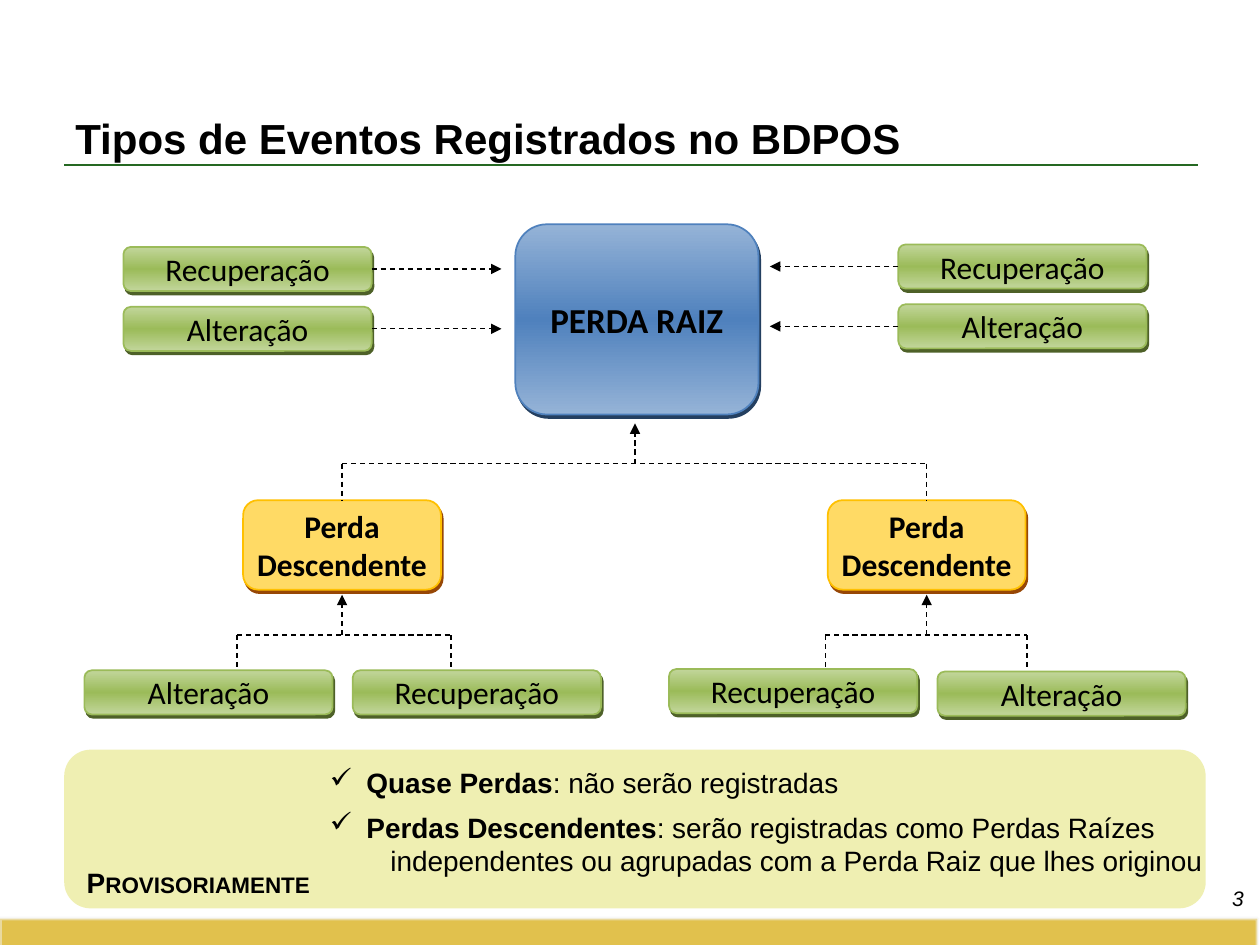
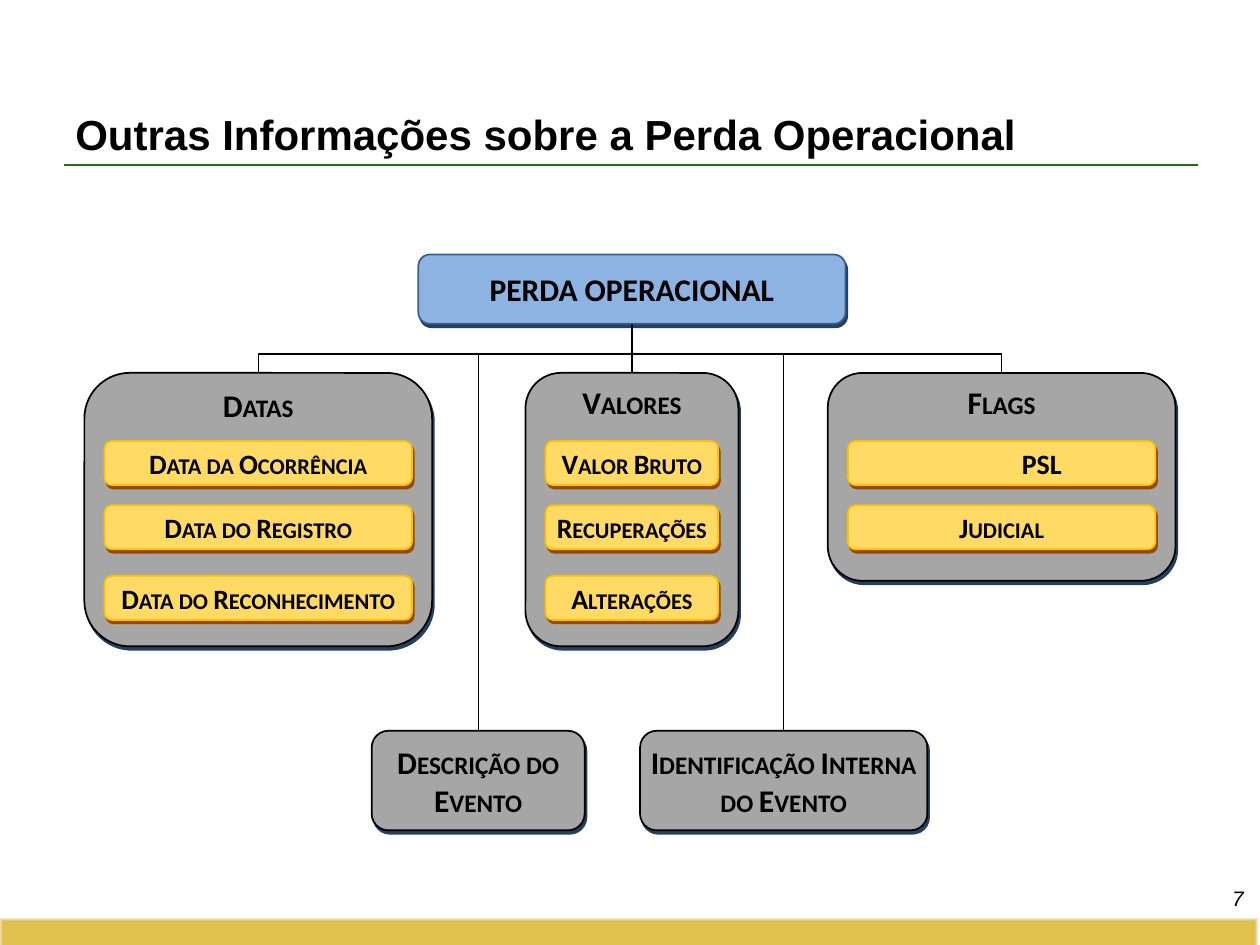
"""Build the two slides on operational loss events."""
import copy
from dataclasses import dataclass
from typing import Any, NamedTuple, Optional, Union

import pptx
import pptx.dml.color
import pptx.enum.dml
import pptx.enum.shapes
import pptx.enum.text
import pptx.oxml
import pptx.oxml.ns
import pptx.util

qn = pptx.oxml.ns.qn
Pt = pptx.util.Pt
ALIGN = pptx.enum.text.PP_ALIGN
ANCHOR = pptx.enum.text.MSO_ANCHOR
SHAPE = pptx.enum.shapes.MSO_SHAPE
TOP, LEFT, BOTTOM, RIGHT = range(4)

prs = pptx.Presentation()
prs.slide_width = pptx.util.Inches(10)
prs.slide_height = pptx.util.Inches(7.5)
COL = prs.slide_width // 100
ROW = prs.slide_height // 75


class Look(NamedTuple):
    fill: tuple[str, ...]
    line: str
    shadow: str


@dataclass(frozen=True)
class Theme:
    ink: str = "000000"
    rule: str = "256822"
    band: str = "E1C14D"
    band_edge: str = "F2F2F2"
    note: str = "CCCC00"
    text_font: str = "Arial"
    box_font: str = "Calibri"
    title: float = 24
    root: float = 20
    box: float = 18
    body: float = 16
    number: float = 12
    blue: Look = Look(("95B3D7", "4F81BD", "95B3D7"), "4F81BD", "243F60")
    green: Look = Look(("C2D69B", "9BBB59", "C2D69B"), "9BBB59", "4E6128")
    yellow: Look = Look(("FFDA65",), "FFC000", "974706")
    sky: Look = Look(("8DB3E2",), "365F91", "243F60")
    grey: Look = Look(("A6A6A6",), "000000", "243F60")


T = Theme()


class Point(NamedTuple):
    col: float
    row: float


class Box(NamedTuple):
    col: float
    row: float
    cols: float
    rows: float

    def emu(self) -> tuple[int, ...]:
        return tuple(round(v * u) for v, u in zip(self, (COL, ROW, COL, ROW)))

    def side(self, site: int) -> Point:
        dx, dy = ((0.5, 0), (0, 0.5), (0.5, 1), (1, 0.5))[site]
        return Point(self.col + dx * self.cols, self.row + dy * self.rows)


class Joint(NamedTuple):
    box: Box
    sp: Any
    site: int

    def point(self) -> Point:
        return self.box.side(self.site)


End = Union[Point, Joint]


class Item(NamedTuple):
    text: str
    indent: float = 0


class Panel(NamedTuple):
    box: Box
    title: str
    items: tuple[Item, ...]


def set_all(obj: Any, values: dict) -> None:
    for name, value in values.items():
        setattr(obj, name, value)


def rgb(code: str) -> pptx.dml.color.RGBColor:
    return pptx.dml.color.RGBColor.from_string(code)


def sub(parent: Any, tag: str, **attrs: str) -> Any:
    el = parent.makeelement(qn(tag), attrs)
    parent.append(el)
    return el


def write(p: Any, text: str, size: float, font: str = T.text_font,
          small: bool = False, **style: Any) -> None:
    r = p.add_run()
    r.text = text
    set_all(r.font, {"size": Pt(size), "name": font, **style})
    r.font.color.rgb = rgb(T.ink)
    if small:
        r._r.get_or_add_rPr().set("cap", "small")


def text_box(s: Any, box: Box, anchor: Any = ANCHOR.TOP) -> Any:
    tf = s.shapes.add_textbox(*box.emu()).text_frame
    set_all(tf, {"word_wrap": True, "vertical_anchor": anchor})
    return tf


def plain(s: Any, kind: Any, box: Box, fill: str, alpha: Optional[int] = None) -> Any:
    sp = s.shapes.add_shape(kind, *box.emu())
    sp.shadow.inherit = False
    sp.fill.solid()
    sp.fill.fore_color.rgb = rgb(fill)
    sp.line.fill.background()
    if alpha:
        sub(sp._element.spPr.find(".//" + qn("a:srgbClr")), "a:alpha", val=str(alpha * 1000))
    return sp


def gradient(sp: Any, colors: tuple[str, ...]) -> None:
    sp.fill.gradient()
    sp.fill.gradient_angle = 270
    stops = sp._element.spPr.find(".//" + qn("a:gsLst"))
    stops.append(copy.deepcopy(stops[0]))
    for i, (stop, color) in enumerate(zip(sp.fill.gradient_stops, colors)):
        stop.color.rgb = rgb(color)
        stop.position = i / (len(colors) - 1)


def card(s: Any, box: Box, text: str, look: Look, size: float = T.box,
         bold: bool = True, small: bool = False, anchor: Any = ANCHOR.MIDDLE,
         indent: float = 0) -> Any:
    sp = plain(s, SHAPE.ROUNDED_RECTANGLE, box, look.fill[0])
    if len(look.fill) > 1:
        gradient(sp, look.fill)
    sp.line.color.rgb = rgb(look.line)
    sp.line.width = Pt(1)
    shadow = sub(sp._element.spPr.find(qn("a:effectLst")), "a:outerShdw",
                 dist=str(Pt(2.2)), dir=str(63 * 60000), algn="ctr", rotWithShape="0")
    sub(shadow, "a:srgbClr", val=look.shadow)
    tf = sp.text_frame
    set_all(tf, {"word_wrap": True, "vertical_anchor": anchor, "margin_top": 0,
                 "margin_right": 0, "margin_bottom": 0, "margin_left": round(indent * COL)})
    p = tf.paragraphs[0]
    p.alignment = ALIGN.CENTER
    write(p, text, size, T.box_font, small, bold=bold)
    return sp


def link(s: Any, begin: End, end: End, dashed: bool = False, arrow: bool = False,
         color: str = T.ink, width: float = 0.75) -> None:
    a, b = (e.point() if isinstance(e, Joint) else e for e in (begin, end))
    cx = s.shapes.add_connector(
        pptx.enum.shapes.MSO_CONNECTOR.STRAIGHT, round(a.col * COL), round(a.row * ROW),
        round(b.col * COL), round(b.row * ROW))
    for e, connect in ((begin, cx.begin_connect), (end, cx.end_connect)):
        if isinstance(e, Joint):
            connect(e.sp, e.site)
    cx.line.color.rgb = rgb(color)
    cx.line.width = Pt(width)
    if dashed:
        cx.line.dash_style = pptx.enum.dml.MSO_LINE.DASH
    if arrow:
        sub(cx._element.spPr.find(qn("a:ln")), "a:tailEnd", type="triangle")
    sub(cx._element.spPr, "a:effectLst")


def fork(s: Any, tip: Point, row: float, ends: tuple[End, End]) -> None:
    tops = [Point((e.point() if isinstance(e, Joint) else e).col, row) for e in ends]
    link(s, tops[0], tops[1], dashed=True)
    link(s, Point(tip.col, row), tip, dashed=True, arrow=True)
    for top, end in zip(tops, ends):
        link(s, top, end, dashed=True)


def new_slide(title: str, number: int, title_row: float, anchor: Any) -> Any:
    s = prs.slides.add_slide(prs.slide_layouts[6])
    band = plain(s, SHAPE.RECTANGLE, Box(0, 72.9, 99.8, 2.4), T.band)
    band.line.color.rgb = rgb(T.band_edge)
    band.line.width = Pt(2)
    edge = band._element.spPr.find(qn("a:ln")).find(".//" + qn("a:srgbClr"))
    sub(edge, "a:alpha", val="50000")
    link(s, Point(5.1, 13.1), Point(95.1, 13.1), color=T.rule, width=1.5)
    tf = text_box(s, Box(5, title_row, 90, 8.7), anchor)
    write(tf.paragraphs[0], title, T.title, bold=True)
    p = text_box(s, Box(95.7, 69.8, 4, 3.1)).paragraphs[0]
    p.alignment = ALIGN.RIGHT
    write(p, str(number), T.number, italic=True)
    return s


def note_line(p: Any, term: str, text: str, margin: float, bullet: bool) -> None:
    pPr = p._p.get_or_add_pPr()
    pPr.set("marL", str(round(margin * COL)))
    pPr.set("indent", str(-round(margin * COL) if bullet else 0))
    if bullet:
        sub(pPr, "a:buChar", char="✓")
        write(p, term, T.body, bold=True)
    else:
        sub(pPr, "a:buNone")
    write(p, text, T.body, bold=False)


def event_types() -> None:
    s = new_slide("Tipos de Eventos Registrados no BDPOS", 3, 8.4, ANCHOR.TOP)
    card(s, Box(40.9, 17.8, 19.3, 15.1), "PERDA RAIZ", T.blue, T.root)
    for col, row, tip_col, site in ((9.8, 19.6, 39.8, RIGHT), (71.3, 19.4, 61.1, LEFT)):
        for i, text in enumerate(("Recuperação", "Alteração")):
            box = Box(col, row + 4.75 * i, 19.7, 3.5)
            joint = Joint(box, card(s, box, text, T.green, bold=False), site)
            link(s, joint, Point(tip_col, joint.point().row), dashed=True, arrow=True)

    children = []
    for col in (19.3, 65.7):
        box = Box(col, 39.7, 15.7, 7.1)
        children.append(Joint(box, card(s, box, "Perda Descendente", T.yellow), TOP))
    fork(s, Point(50.4, 33.6), 36.8, tuple(children))
    for child, cols in zip(children, ((18.8, 35.8), (65.5, 81.5))):
        fork(s, Point(child.point().col, 47.2), 50.4, tuple(Point(c, 53.2) for c in cols))
    for col, row, text in ((6.7, 53.2, "Alteração"), (28, 53.2, "Recuperação"),
                           (53.1, 53.1, "Recuperação"), (74.4, 53.3, "Alteração")):
        card(s, Box(col, row, 19.7, 3.5), text, T.green, bold=False)

    plain(s, SHAPE.ROUNDED_RECTANGLE, Box(5.1, 59.5, 90.6, 12.6), T.note, alpha=30)
    tf = text_box(s, Box(25.2, 60.3, 72.1, 9.9))
    lines = (("Quase Perdas", ": não serão registradas", 2.9, True),
             ("Perdas Descendentes", ": serão registradas como Perdas Raízes", 2.9, True),
             ("", "independentes ou agrupadas com a Perda Raiz que lhes originou", 4.8, False))
    for i, line in enumerate(lines):
        note_line(tf.add_paragraph() if i else tf.paragraphs[0], *line)
    tf.paragraphs[0].space_after = Pt(6)
    p = text_box(s, Box(5.1, 68.2, 21.3, 3.7)).paragraphs[0]
    p.alignment = ALIGN.CENTER
    write(p, "Provisoriamente", T.body, small=True, bold=True)


def loss_information() -> None:
    s = new_slide("Outras Informações sobre a Perda Operacional", 7, 4.4, ANCHOR.BOTTOM)
    bus_row, item_rows, pad = 28.1, (35, 40.1, 45.7), 1.6
    root = Box(33.2, 20.2, 33.9, 5.5)
    root_joint = Joint(root, card(s, root, "PERDA OPERACIONAL", T.sky), BOTTOM)
    panels = (
        Panel(Box(6.7, 29.6, 27.6, 21.7), "Datas",
              (Item("Data da Ocorrência"), Item("Data do Registro"),
               Item("Data do Reconhecimento"))),
        Panel(Box(41.7, 29.6, 16.9, 21.7), "Valores",
              (Item("Valor Bruto"), Item("Recuperações"), Item("Alterações"))),
        Panel(Box(65.7, 29.6, 27.6, 16.5), "Flags", (Item("PSL", 3.2), Item("Judicial"))),
        Panel(Box(29.5, 58, 16.9, 7.9), "Descrição do Evento", ()),
        Panel(Box(50.8, 58, 22.8, 7.9), "Identificação Interna do Evento", ()),
    )
    for box, title, items in panels:
        sp = card(s, box, title, T.grey, small=True,
                  anchor=ANCHOR.TOP if items else ANCHOR.MIDDLE)
        for item, row in zip(items, item_rows):
            card(s, Box(box.col + pad, row, box.cols - 2 * pad, 3.5), item.text, T.yellow,
                 T.body, small=True, indent=item.indent)
        link(s, Point(box.side(TOP).col, bus_row), Joint(box, sp, TOP))
    link(s, root_joint, Point(root.side(BOTTOM).col, bus_row))
    link(s, *(Point(panels[i].box.side(TOP).col, bus_row) for i in (0, 2)))


def main() -> None:
    event_types()
    loss_information()
    prs.save("out.pptx")


if __name__ == "__main__":
    main()
